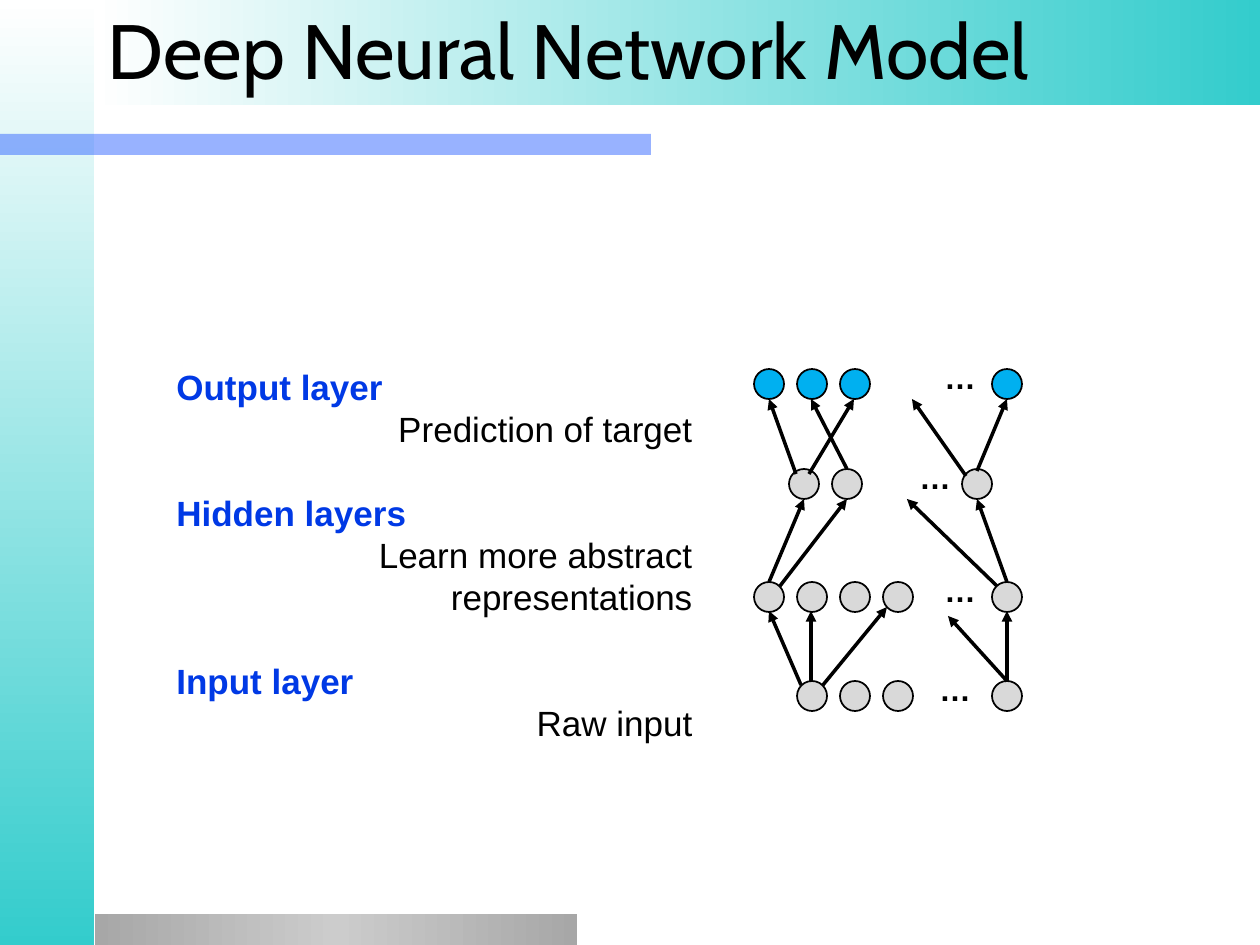
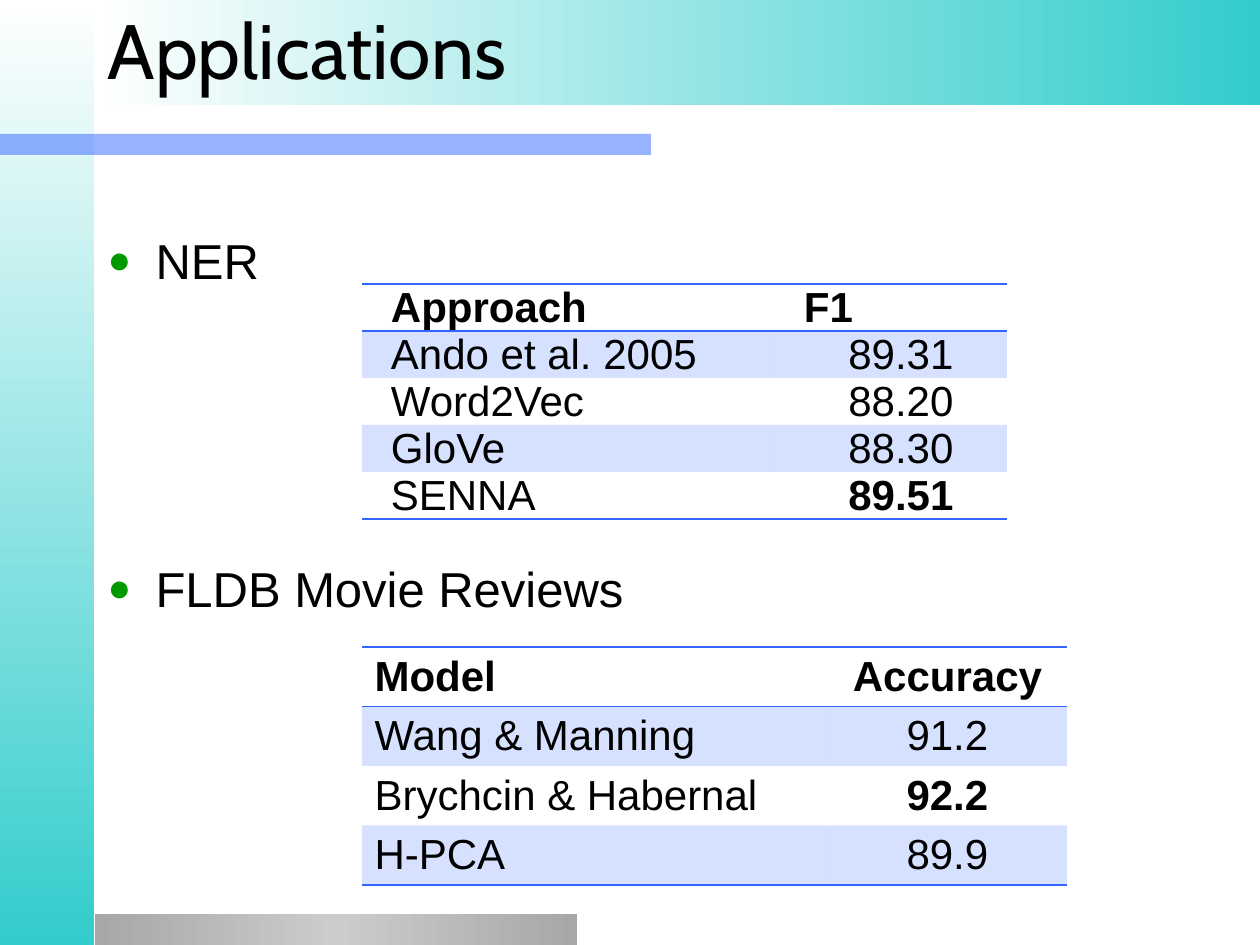
from lxml import etree
from pptx import Presentation
from pptx.dml.color import RGBColor
from pptx.enum.shapes import MSO_CONNECTOR, MSO_SHAPE
from pptx.enum.text import MSO_ANCHOR, MSO_AUTO_SIZE, PP_ALIGN
from pptx.oxml.ns import qn
from pptx.util import Emu, Pt

RECTANGLE, OVAL = MSO_SHAPE.RECTANGLE, MSO_SHAPE.OVAL
STRAIGHT = MSO_CONNECTOR.STRAIGHT
LEFT, CENTER, RIGHT = PP_ALIGN.LEFT, PP_ALIGN.CENTER, PP_ALIGN.RIGHT
MIDDLE = MSO_ANCHOR.MIDDLE
NO_FIT, GROW = MSO_AUTO_SIZE.NONE, MSO_AUTO_SIZE.SHAPE_TO_FIT_TEXT

BLACK = RGBColor(0x00, 0x00, 0x00)
WHITE = RGBColor(0xFF, 0xFF, 0xFF)
TEAL = RGBColor(0x33, 0xCC, 0xCC)
BLUE = RGBColor(0x33, 0x66, 0xFF)
HEADING_BLUE = RGBColor(0x00, 0x39, 0xE5)
OUTPUT_BLUE = RGBColor(0x00, 0xB0, 0xF0)
NODE_GRAY = RGBColor(0xD9, 0xD9, 0xD9)
DARK_GRAY = RGBColor(0xA7, 0xA7, 0xA7)
LIGHT_GRAY = RGBColor(0xCC, 0xCC, 0xCC)
BULLET_GREEN = RGBColor(0x00, 0x99, 0x00)

TITLE_FONT, TEXT_FONT = "Cabin", "Arial"
PX_PER_INCH = 126
PLAIN_TABLE_STYLE = "{2D5ABB26-0587-4C30-8999-92F81FD0307C}"

# Network: top, left of first node, nodes in the run, left of last node, left of dots, fill
NODE_SIZE, NODE_STEP, DOTS_RISE = 30, 43, 17
LAYERS = [
    (369, 754, 3, 992, 932, OUTPUT_BLUE),
    (469, 789, 2, 962, 907, NODE_GRAY),
    (582, 754, 4, 992, 932, NODE_GRAY),
    (681, 797, 3, 992, 927, NODE_GRAY),
]
LINKS = [
    # input to first hidden layer
    (801, 685, 769, 611), (811, 681, 811, 611), (823, 685, 887, 607),
    (1007, 681, 948, 616), (1007, 681, 1007, 611),
    # first to second hidden layer
    (769, 582, 804, 499), (780, 586, 847, 499),
    (997, 586, 907, 499), (1007, 582, 977, 499),
    # second hidden layer to output
    (796, 474, 769, 399), (809, 474, 854, 399), (847, 469, 811, 399),
    (977, 471, 1007, 399), (966, 476, 912, 399),
]
LAYER_NOTES = [
    ("Output layer", "Prediction of target"),
    ("Hidden layers", "Learn more abstract representations"),
    ("Input layer", "Raw input"),
]

NER_SCORES = [
    ("Approach", "F1"),
    ("Ando et al. 2005", "89.31"),
    ("Word2Vec", "88.20"),
    ("GloVe", "88.30"),
    ("SENNA", "89.51"),
]
REVIEW_SCORES = [
    ("Model", "Accuracy"),
    ("Wang & Manning", "91.2"),
    ("Brychcin & Habernal", "92.2"),
    ("H-PCA", "89.9"),
]


def px(length):
    return Emu(round(length * 914400 / PX_PER_INCH))


def box(*lengths):
    return [px(length) for length in lengths]


def apply(target, **values):
    for key, value in values.items():
        setattr(target, key, value)


def add_run(paragraph, text, size, color=BLACK, bold=False, font=TEXT_FONT):
    run = paragraph.add_run()
    run.text = text
    apply(run.font, name=font, size=Pt(size), bold=bold)
    run.font.color.rgb = color


def place(placeholder, *area):
    left, top, width, height = box(*area)
    apply(placeholder, left=left, top=top, width=width, height=height)
    apply(placeholder.text_frame, auto_size=NO_FIT, word_wrap=True)


def set_alpha(properties, percent):
    color = properties.find(f"{qn('a:solidFill')}/{qn('a:srgbClr')}")
    etree.SubElement(color, qn("a:alpha"), val=str(percent * 1000))


# Shared frame of the slides

def add_band(slide, *area):
    band = slide.shapes.add_shape(RECTANGLE, *box(*area))
    band.shadow.inherit = False
    band.line.fill.background()
    return band


def fill_gradient(band, angle, *colors):
    band.fill.gradient()
    band.fill.gradient_angle = angle
    stops = band.element.spPr.find(f".//{qn('a:gsLst')}")
    stops.clear()
    for i, color in enumerate(colors):
        position = 100000 * i // (len(colors) - 1)
        stop = etree.SubElement(stops, qn("a:gs"), pos=str(position))
        etree.SubElement(stop, qn("a:srgbClr"), val=str(color))


def build_master_bands(prs, slide):
    """Draw the bands, then hand them to the master behind all slides."""
    side = add_band(slide, 0, 0, 94, 945)
    fill_gradient(side, 270, WHITE, TEAL)
    accent = add_band(slide, 0, 134, 651, 21)
    accent.fill.solid()
    accent.fill.fore_color.rgb = BLUE
    set_alpha(accent.element.spPr, 50)
    footer = add_band(slide, 95, 914, 482, 31)
    fill_gradient(footer, 0, DARK_GRAY, LIGHT_GRAY, DARK_GRAY)
    header = add_band(slide, 94, 0, 1166, 105)
    fill_gradient(header, 0, WHITE, TEAL)
    for i, band in enumerate((side, accent, footer, header)):
        band.element.nvSpPr.cNvPr.id = 101 + i
        prs.slide_master.shapes.element.insert(2 + i, band.element)


def add_titled_slide(prs, layout_index, title):
    slide = prs.slides.add_slide(prs.slide_layouts[layout_index])
    heading = slide.shapes.title
    place(heading, 95, -4, 1166, 105)
    heading.text_frame.vertical_anchor = MIDDLE
    paragraph = heading.text_frame.paragraphs[0]
    paragraph.alignment = LEFT
    add_run(paragraph, title, 44, font=TITLE_FONT)
    return slide


# Network diagram

def add_node(slide, left, top, fill):
    node = slide.shapes.add_shape(OVAL, *box(left, top, NODE_SIZE, NODE_SIZE))
    node.shadow.inherit = False
    node.fill.solid()
    node.fill.fore_color.rgb = fill
    node.line.color.rgb = BLACK
    node.line.width = Pt(1)


def add_dots(slide, left, top):
    dots = slide.shapes.add_textbox(*box(left, top, 64, 50))
    apply(dots.text_frame, word_wrap=True, auto_size=GROW)
    add_run(dots.text_frame.paragraphs[0], "…", 18, bold=True)


def add_layer(slide, top, first, count, last, dots, fill):
    for i in range(count):
        add_node(slide, first + i * NODE_STEP, top, fill)
    add_node(slide, last, top, fill)
    add_dots(slide, dots, top - DOTS_RISE)


def add_link(slide, *ends):
    link = slide.shapes.add_connector(STRAIGHT, *box(*ends))
    link.line.color.rgb = BLACK
    link.line.width = Pt(2)
    outline = link.element.spPr.find(qn("a:ln"))
    etree.SubElement(outline, qn("a:tailEnd"), type="triangle")
    etree.SubElement(link.element.spPr, qn("a:effectLst"))


def add_layer_notes(slide):
    notes = slide.shapes.add_textbox(*box(164, 359, 541, 394))
    frame = notes.text_frame
    apply(frame, word_wrap=True, auto_size=GROW)
    for i, (layer, role) in enumerate(LAYER_NOTES):
        heading = frame.add_paragraph() if i else frame.paragraphs[0]
        apply(heading, line_spacing=Pt(24), space_before=Pt(24 if i else 0))
        add_run(heading, layer, 20, HEADING_BLUE, bold=True)
        detail = frame.add_paragraph()
        apply(detail, line_spacing=Pt(24), alignment=RIGHT)
        add_run(detail, role, 20)


# Bulleted list and score tables

def add_bullet(paragraph):
    properties = paragraph.element.get_or_add_pPr() if hasattr(paragraph, "element") \
        else paragraph._p.get_or_add_pPr()
    properties.set("marL", str(px(48)))
    properties.set("indent", str(px(-48)))
    color = etree.SubElement(properties, qn("a:buClr"))
    etree.SubElement(color, qn("a:srgbClr"), val=str(BULLET_GREEN))
    etree.SubElement(properties, qn("a:buSzPct"), val="80000")
    etree.SubElement(properties, qn("a:buFont"), typeface=TEXT_FONT)
    etree.SubElement(properties, qn("a:buChar"), char="●")


def add_task_list(slide, tasks, gap):
    body = slide.placeholders[1]
    place(body, 95, 224, 1071, 675)
    for i, task in enumerate(tasks):
        frame = body.text_frame
        paragraph = frame.add_paragraph() if i else frame.paragraphs[0]
        if i:
            paragraph.space_before = Pt(gap)
        add_bullet(paragraph)
        add_run(paragraph, task, 28)


def add_rule(cell_properties, side):
    rule = etree.Element(qn(f"a:{side}"), w=str(Pt(1)))
    fill = etree.SubElement(rule, qn("a:solidFill"))
    etree.SubElement(fill, qn("a:srgbClr"), val=str(BLUE))
    cell_properties.insert(0, rule)


def style_cell(cell, shaded, rules):
    cell.vertical_anchor = MIDDLE
    properties = cell._tc.get_or_add_tcPr()
    if shaded:
        cell.fill.solid()
        cell.fill.fore_color.rgb = BLUE
        set_alpha(properties, 20)
    else:
        cell.fill.background()
    for side in rules:
        add_rule(properties, side)


def add_score_table(slide, scores, left, top, widths, row_height, best,
                    header_align, indent=0, margins=None):
    frame = slide.shapes.add_table(
        len(scores), 2, *box(left, top, sum(widths), row_height * len(scores)))
    frame.element.find(f".//{qn('a:tableStyleId')}").text = PLAIN_TABLE_STYLE
    table = frame.table
    apply(table, first_row=False, horz_banding=False)
    for column, width in zip(table.columns, widths):
        column.width = px(width)
    for r, row in enumerate(scores):
        table.rows[r].height = px(row_height)
        rules = {0: ("lnB", "lnT"), len(scores) - 1: ("lnB",)}.get(r, ())
        for c, text in enumerate(row):
            cell = table.cell(r, c)
            style_cell(cell, r % 2 == 1, rules)
            apply(cell, **(margins or {}))
            paragraph = cell.text_frame.paragraphs[0]
            value_align = CENTER if r else header_align
            paragraph.alignment = value_align if c else LEFT
            if indent:
                paragraph._p.get_or_add_pPr().set("indent", str(px(indent)))
            add_run(paragraph, text, 24, bold=r == 0 or text == best)


def main():
    prs = Presentation()
    prs.slide_width, prs.slide_height = box(1260, 945)

    # Deep network
    network = add_titled_slide(prs, 5, "Deep Neural Network Model")
    build_master_bands(prs, network)
    add_layer_notes(network)
    for layer in LAYERS:
        add_layer(network, *layer)
    for link in LINKS:
        add_link(network, *link)

    # Applications
    applications = add_titled_slide(prs, 1, "Applications")
    add_task_list(applications, ["NER", "FLDB Movie Reviews"], gap=154)
    add_score_table(applications, REVIEW_SCORES, 362, 647, (466, 239), 59,
                    best="92.2", header_align=CENTER)
    tight = dict(margin_left=px(9), margin_right=px(9), margin_top=0, margin_bottom=0)
    add_score_table(applications, NER_SCORES, 362, 284, (413, 232), 47,
                    best="89.51", header_align=LEFT, indent=20, margins=tight)

    prs.save("out.pptx")


if __name__ == "__main__":
    main()
